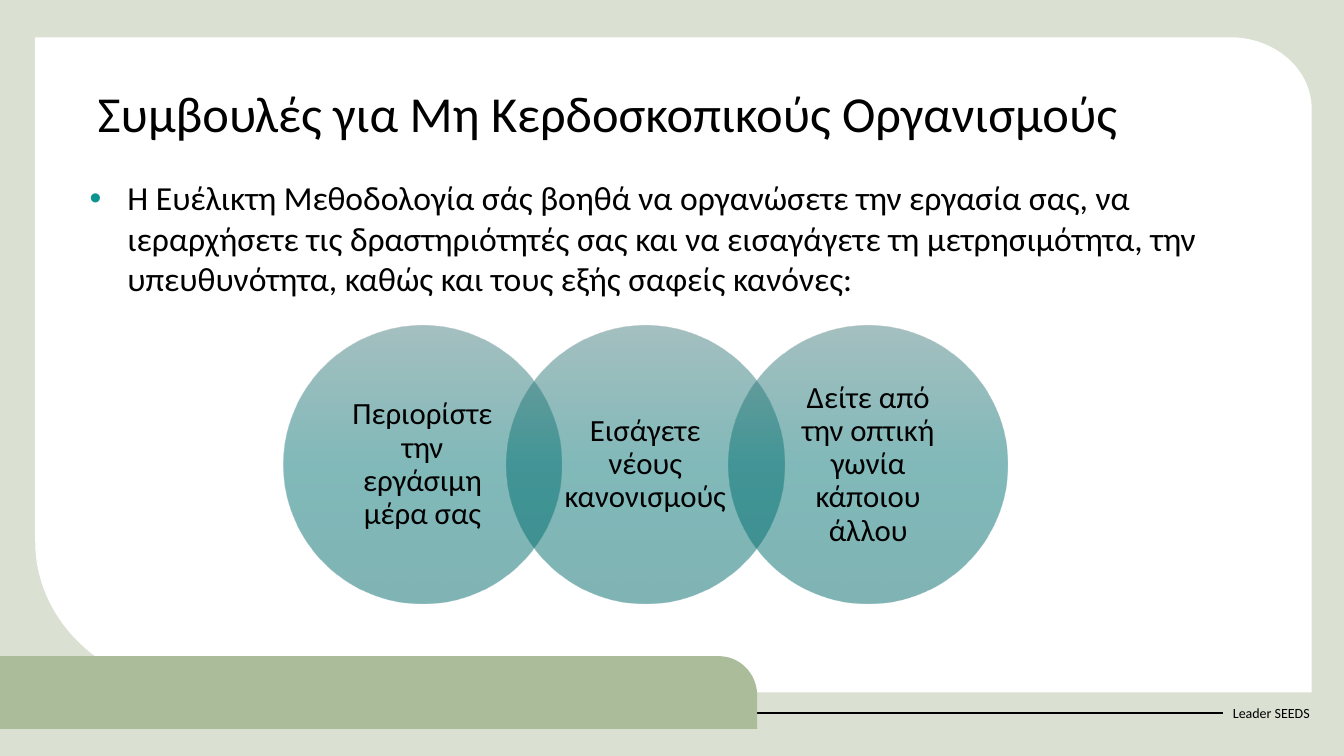
from dataclasses import dataclass
from math import cos, radians, sin

from lxml.etree import SubElement as Sub
from pptx import Presentation
from pptx.dml.color import RGBColor
from pptx.enum.shapes import MSO_CONNECTOR as Link, MSO_SHAPE as Kind
from pptx.enum.text import MSO_ANCHOR as Anchor, PP_ALIGN as Align
from pptx.oxml.ns import qn
from pptx.util import Emu, Inches, Pt

# Grid: 133.3 columns by 75 rows, a tenth of an inch each
COLS, ROWS = 133.3, 75
FONT, INK = "Calibri", "000000"
STOPS = ((0, "4B8081"), (50, "037273"), (100, "006869"))
Point = tuple[float, float]


@dataclass
class Label:
    text: str
    col: float
    row: float
    wide: float
    high: float
    size: float
    anchor: Anchor = Anchor.TOP
    align: Align = Align.LEFT
    lead: float = 1.0
    pad: Point = (1, 0.5)
    bullet: str = ""


def cell(n: float) -> Emu:
    return Inches(n / 10)


def tint(code: str) -> RGBColor:
    return RGBColor.from_string(code)


def arc(mid: Point, rad: Point, start: int) -> list[Point]:
    """Quarter ellipse, clockwise from the start angle."""
    turns = [radians(a) for a in range(start, start + 91, 3)]
    return [(mid[0] + rad[0] * cos(t), mid[1] + rad[1] * sin(t)) for t in turns]


def plain(shape, code: str) -> None:
    shape.shadow.inherit = False
    shape.line.fill.background()
    shape.fill.solid()
    shape.fill.fore_color.rgb = tint(code)


def outline(slide, dots: list[Point], code: str) -> None:
    spots = [(cell(x), cell(y)) for x, y in dots]
    form = slide.shapes.build_freeform(*spots[0], scale=1.0)
    form.add_line_segments(spots[1:], close=True)
    plain(form.convert_to_shape(), code)


def write(slide, item: Label) -> None:
    box = slide.shapes.add_textbox(
        *map(cell, (item.col, item.row, item.wide, item.high)))
    frame = box.text_frame
    frame.text = item.text
    frame.word_wrap = True
    frame.vertical_anchor = item.anchor
    frame.margin_left = frame.margin_right = cell(item.pad[0])
    frame.margin_top = frame.margin_bottom = cell(item.pad[1])
    para = frame.paragraphs[0]
    para.alignment = item.align
    para.line_spacing = item.lead
    if item.bullet:
        props = para._p.get_or_add_pPr()
        props.set("marL", str(cell(3.75)))
        props.set("indent", str(-cell(3.75)))
        Sub(Sub(props, qn("a:buClr")), qn("a:srgbClr"), val=item.bullet)
        Sub(props, qn("a:buFont"), typeface="Arial")
        Sub(props, qn("a:buChar"), char="•")
    font = para.runs[0].font
    font.name, font.size = FONT, Pt(item.size)
    font.color.rgb = tint(INK)


def disc(slide, col: float, row: float, size: float) -> None:
    shape = slide.shapes.add_shape(Kind.OVAL, *map(cell, (col, row, size, size)))
    plain(shape, STOPS[0][1])
    shape.fill.gradient()
    shape.fill.gradient_angle = 270
    ramp = shape._element.spPr.find(qn("a:gradFill")).find(qn("a:gsLst"))
    for old in list(ramp):
        ramp.remove(old)
    for place, code in STOPS:
        stop = Sub(ramp, qn("a:gs"), pos=str(place * 1000))
        Sub(Sub(stop, qn("a:srgbClr"), val=code), qn("a:alpha"), val="50000")


def main() -> None:
    deck = Presentation()
    deck.slide_width, deck.slide_height = cell(COLS), cell(ROWS)
    slide = deck.slides.add_slide(deck.slide_layouts[6])

    # Backdrop and white panel with two rounded corners
    back = slide.shapes.add_shape(Kind.RECTANGLE, 0, 0, cell(COLS), cell(ROWS))
    plain(back, "DAE0D2")
    left, top, right, base = 3.5, 3.7, 130.1, 68.7
    outline(slide, [(left, top),
                    *arc((right - 8.1, top + 7.1), (8.1, 7.1), 270),
                    (right, base),
                    *arc((left + 17, base - 14.9), (17, 14.9), 90)], "FFFFFF")

    # Footer: name, rule and green bar
    write(slide, Label("Leader SEEDS", 121.3, 68.7, 10.1, 4, 10, Anchor.MIDDLE))
    rule = slide.shapes.add_connector(
        Link.STRAIGHT, 0, cell(70.7), cell(121.3), cell(70.7))
    rule.line.color.rgb = tint(INK)
    rule.line.width = Pt(1.5)
    Sub(rule._element.spPr, qn("a:effectLst"))
    outline(slide, [(0, 72.3), (0, 65.1),
                    *arc((71.3, 69), (3.8, 3.9), 270), (75.1, 72.3)], "AABC99")

    # Title and lead text
    write(slide, Label("Συμβουλές για Μη Κερδοσκοπικούς Οργανισμούς",
                       8.7, 8.3, 115.9, 8.8, 36, lead=0.9))
    write(slide, Label(
        "Η Ευέλικτη Μεθοδολογία σάς βοηθά να οργανώσετε την εργασία σας, "
        "να ιεραρχήσετε τις δραστηριότητές σας και να εισαγάγετε τη "
        "μετρησιμότητα, την υπευθυνότητα, καθώς και τους εξής σαφείς κανόνες:",
        7.9, 17.1, 112.2, 17.2, 24, bullet="0D9390"))

    # Chain of overlapping discs
    tips = ("Περιορίστε την εργάσιμη μέρα σας",
            "Εισάγετε νέους κανονισμούς",
            "Δείτε από την οπτική γωνία κάποιου άλλου")
    size, step, inner = 27.6, 22.1, 19.5
    inset = (size - inner) / 2
    for i, tip in enumerate(tips):
        col, row = 28.1 + i * step, 32.3
        disc(slide, col, row, size)
        write(slide, Label(tip, col + inset, row + inset, inner, inner, 22,
                           Anchor.MIDDLE, Align.CENTER, 0.9, (1.5, 0.3)))

    deck.save("out.pptx")


if __name__ == "__main__":
    main()
